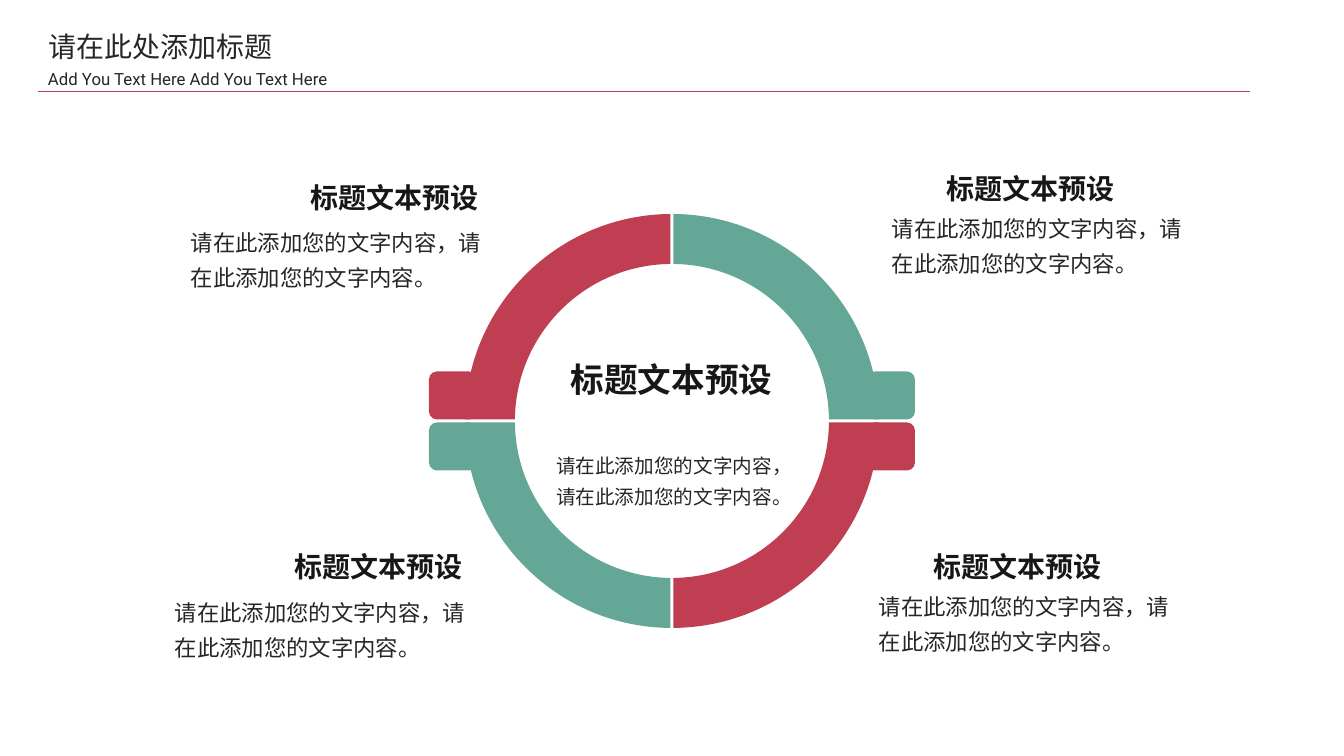
from math import asin, cos, pi, sin, tan

from lxml.etree import SubElement
from pptx import Presentation
from pptx.dml.color import RGBColor
from pptx.enum.shapes import MSO_CONNECTOR, MSO_SHAPE
from pptx.enum.text import MSO_ANCHOR, MSO_AUTO_SIZE, PP_ALIGN
from pptx.oxml.ns import qn
from pptx.util import Pt

PX = 914400 / 100.8
GREEN, RED, BLACK, GREY = "64A797", "C03E51", "181717", "262626"
HEAD = "标题文本预设"
BODY = "请在此添加您的文字内容，请在此添加您的文字内容。"


def paint(fmt, color):
    fmt.solid()
    fmt.fore_color.rgb = RGBColor.from_string(color)


def put_text(text, box, size, color=GREY, bold=False, align=PP_ALIGN.LEFT,
             anchor=MSO_ANCHOR.TOP, spacing=1.0, inset=(0, 0), sp=None):
    box = [round(v * PX) for v in box]
    if sp is None:
        sp = s.shapes.add_textbox(*box)
    sp.left, sp.top, sp.width, sp.height = box
    tf = sp.text_frame
    tf.word_wrap, tf.auto_size = True, MSO_AUTO_SIZE.NONE
    tf.vertical_anchor = anchor
    tf.margin_left = tf.margin_right = round(inset[0] * PX)
    tf.margin_top = tf.margin_bottom = round(inset[1] * PX)
    p = tf.paragraphs[0]
    p.alignment, p.line_spacing = align, spacing
    r = p.add_run()
    r.text = text
    r.font.size, r.font.bold, r.font.name = Pt(size), bold, "Roboto"
    paint(r.font.fill, color)
    SubElement(r.font._element, qn("a:ea"), typeface="Roboto")


prs = Presentation()
prs.slide_width, prs.slide_height = round(1344 * PX), round(756 * PX)
s = prs.slides.add_slide(prs.slide_layouts[5])

# Header
put_text("请在此处添加标题", (38, 24, 277, 44), 20, inset=(10, 5), sp=s.shapes.title)
put_text("Add You Text Here Add You Text Here", (38, 58, 337, 34), 12,
         spacing=1.3, inset=(10, 5))
rule = s.shapes.add_connector(MSO_CONNECTOR.STRAIGHT,
                              *(round(v * PX) for v in (38, 91, 1250, 91)))
paint(rule.line.fill, RED)
rule.line.width = Pt(0.5)
SubElement(rule._element.spPr, qn("a:effectLst"))

# Ring quarters, each with a rounded tab at its outer end
CX, CY, OUTER, INNER, GAP, TAB = 672, 421, 207, 157, 1.5, 48
for sx, sy, color in ((1, -1, GREEN), (-1, -1, RED), (-1, 1, GREEN), (1, 1, RED)):
    points = []
    for radius, order in ((OUTER, 1), (INNER, -1)):
        a = asin(GAP / radius)
        b = pi / 2 - a
        k = 4 / 3 * tan((b - a) / 4)
        arc = [(cos(a), sin(a)), (cos(a) - k * sin(a), sin(a) + k * cos(a)),
               (cos(b) + k * sin(b), sin(b) - k * cos(b)), (cos(b), sin(b))]
        points += [(round((CX + sx * radius * x) * PX),
                    round((CY + sy * radius * y) * PX)) for x, y in arc[::order]]
    builder = s.shapes.build_freeform(*points[0])
    builder.add_line_segments(points[1:], close=True)
    quarter = builder.convert_to_shape()
    # Join each arc's two handles and end point into one cubic curve
    steps = list(quarter._element.iter(qn("a:lnTo")))
    for arc_steps in (steps[0:3], steps[4:7]):
        curve = arc_steps[0].makeelement(qn("a:cubicBezTo"))
        arc_steps[0].addprevious(curve)
        for step in arc_steps:
            curve.append(step[0])
            step.getparent().remove(step)
    tab_x = CX + sx * 219 - TAB / 2
    tab_y = CY + sy * (GAP + TAB / 2) - TAB / 2
    tab = s.shapes.add_shape(MSO_SHAPE.ROUNDED_RECTANGLE,
                             *(round(v * PX) for v in (tab_x, tab_y, TAB, TAB)))
    for sp in (quarter, tab):
        paint(sp.fill, color)
        sp.line.fill.background()
        sp.shadow.inherit = False

# Centre text
put_text(HEAD, (530, 357, 283, 45), 24, BLACK, True, PP_ALIGN.CENTER, MSO_ANCHOR.MIDDLE)
put_text(BODY, (555, 447, 237, 58), 14, align=PP_ALIGN.RIGHT, spacing=1.3)

# Four captions: heading and body corners
for head_x, head_y, body_x, body_y in ((256, 182, 191, 221), (240, 551, 175, 591),
                                       (892, 173, 892, 207), (879, 551, 879, 585)):
    put_text(HEAD, (head_x, head_y, 234, 30), 20, BLACK, True, PP_ALIGN.RIGHT,
             MSO_ANCHOR.MIDDLE, inset=(11, 5))
    put_text(BODY, (body_x, body_y, 292, 70), 16, spacing=1.3)

prs.save("out.pptx")
